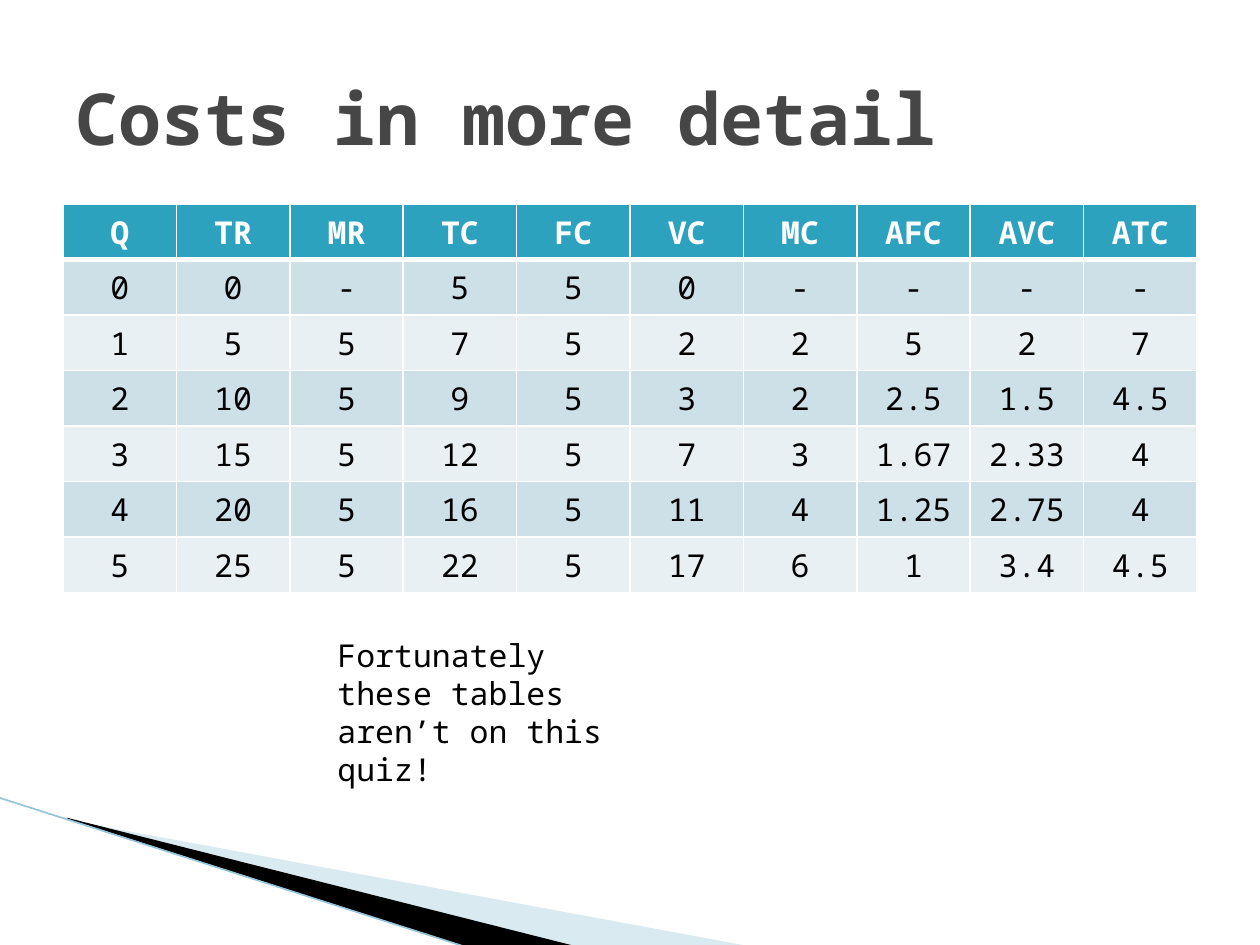
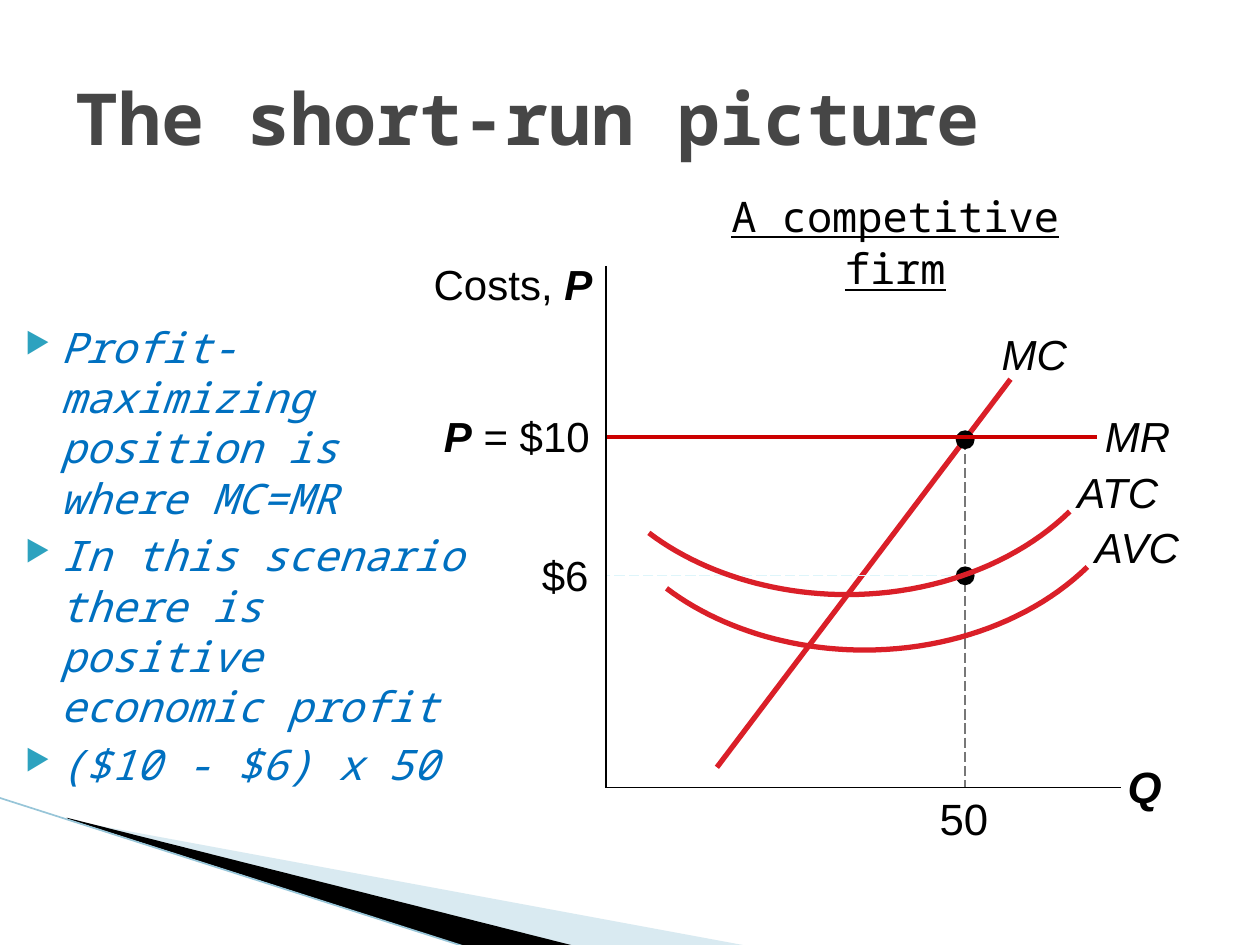
from dataclasses import dataclass

from lxml import etree
from pptx import Presentation
from pptx import util as u
from pptx.dml.color import RGBColor
from pptx.enum import dml, shapes, text
from pptx.oxml import ns

COLUMNS, ROWS = 100, 75
CELL = u.Inches(10) // COLUMNS
MONO, SANS = "Noto Sans Mono", "Arial"
COLORS = {
    "white": "FFFFFF", "black": "000000", "title": "464646", "accent": "2DA2BF",
    "band_dark": "CDE0E8", "band_light": "E8F0F4", "body": "0070C0",
    "wedge": "A0CBDC", "edge": "97C5D8", "curve": "DA1F28", "price": "CC0000",
    "guide": "777777", "cost_guide": "DEF5FA",
}
CENTER, RIGHT = text.PP_ALIGN.CENTER, text.PP_ALIGN.RIGHT

COST_ROWS = [
    "Q TR MR TC FC VC MC AFC AVC ATC",
    "0 0 - 5 5 0 - - - -",
    "1 5 5 7 5 2 2 5 2 7",
    "2 10 5 9 5 3 2 2.5 1.5 4.5",
    "3 15 5 12 5 7 3 1.67 2.33 4",
    "4 20 5 16 5 11 4 1.25 2.75 4",
    "5 25 5 22 5 17 6 1 3.4 4.5",
]
PROFIT_POINTS = [
    "Profit-maximizing position is where MC=MR",
    "In this scenario there is positive economic profit",
    "($10 - $6) x 50",
]


@dataclass
class Box:
    """A region measured in grid columns and rows."""
    left: float
    top: float
    width: float
    height: float

    def inner(self, left, top, width, height):
        return Box(self.left + left, self.top + top, width, height)

    def point(self, column, row):
        return round((self.left + column) * CELL), round((self.top + row) * CELL)

    def emu(self):
        return (*self.point(0, 0), round(self.width * CELL), round(self.height * CELL))


PAGE = Box(0, 0, COLUMNS, ROWS)
TITLE = Box(5, 3, 90, 12.5)
PLOT = Box(48.1, 21.1, 40.9, 41.4)


def rgb(name):
    return RGBColor.from_string(COLORS[name])


def add_element(parent, tag, **attributes):
    return etree.SubElement(parent, ns.qn(tag), attributes)


def add_run(paragraph, words, size, font=MONO, color="black", **style):
    run = paragraph.add_run()
    run.text = words
    run.font.name, run.font.size = font, u.Pt(size)
    run.font.color.rgb = rgb(color)
    for name, value in style.items():
        setattr(run.font, name, value)


def add_text_box(slide, box, padded=True, align=None):
    """Add a wrapping text box and return its frame."""
    frame = slide.shapes.add_textbox(*box.emu()).text_frame
    frame.word_wrap = True
    if not padded:
        frame.margin_left = frame.margin_right = frame.margin_top = frame.margin_bottom = 0
    frame.paragraphs[0].alignment = align
    return frame


def add_line(slide, box, start, end, color, width, dashed=False):
    connector = slide.shapes.add_connector(
        shapes.MSO_CONNECTOR.STRAIGHT, *box.point(*start), *box.point(*end))
    connector.line.color.rgb = rgb(color)
    connector.line.width = u.Pt(width)
    if dashed:
        connector.line.dash_style = dml.MSO_LINE.LONG_DASH
    add_element(connector._element.spPr, "a:effectLst")


def add_outline(slide, box, points, closed):
    start, *rest = [box.point(*point) for point in points]
    builder = slide.shapes.build_freeform(*start)
    builder.add_line_segments(rest, close=closed)
    shape = builder.convert_to_shape()
    shape.shadow.inherit = False
    return shape


def add_wedge(slide, box, points, color, opacity=None):
    shape = add_outline(slide, box, points, closed=True)
    shape.fill.solid()
    shape.fill.fore_color.rgb = rgb(color)
    shape.line.fill.background()
    if opacity:
        fill = shape._element.spPr.find(ns.qn("a:solidFill"))
        add_element(fill[0], "a:alpha", val=str(opacity * 1000))


def add_corner_wedges(slide, box):
    add_wedge(slide, box, [(5.5, 65.1), (59.5, 75.1), (45.6, 75.1), (5.5, 65)], "wedge", 40)
    add_wedge(slide, box, [(5.3, 64.9), (45.7, 75.1), (37.2, 75.2), (5.4, 65)], "black")
    add_line(slide, box, (-0.1, 63.3), (37.1, 75.2), "edge", 0.95)


def add_title(slide, box, words):
    frame = add_text_box(slide, box)
    frame.vertical_anchor = text.MSO_ANCHOR.MIDDLE
    add_run(frame.paragraphs[0], words, 41, color="title", bold=True)


def add_cell_borders(cell, bottom):
    properties = cell._tc.get_or_add_tcPr()
    for side, width in (("L", 1), ("R", 1), ("T", 1), ("B", bottom)):
        line = add_element(properties, f"a:ln{side}", w=str(u.Pt(width)))
        add_element(add_element(line, "a:solidFill"), "a:srgbClr", val=COLORS["white"])


def add_cost_table(slide, box):
    rows = [line.split() for line in COST_ROWS]
    table = slide.shapes.add_table(len(rows), len(rows[0]), *box.emu()).table
    for i, values in enumerate(rows):
        header = i == 0
        fill = "accent" if header else "band_dark" if i % 2 else "band_light"
        for j, value in enumerate(values):
            cell = table.cell(i, j)
            add_cell_borders(cell, bottom=3 if header else 1)
            cell.fill.solid()
            cell.fill.fore_color.rgb = rgb(fill)
            paragraph = cell.text_frame.paragraphs[0]
            paragraph.alignment = CENTER
            add_run(paragraph, value, 18, color="white" if header else "black", bold=header)


def add_bullets(slide, box, points):
    frame = add_text_box(slide, box)
    for i, point in enumerate(points):
        paragraph = frame.add_paragraph() if i else frame.paragraphs[0]
        properties = paragraph._p.get_or_add_pPr()
        properties.set("marL", str(u.Inches(0.4)))
        properties.set("indent", str(u.Inches(-0.28)))
        add_element(add_element(properties, "a:buClr"), "a:srgbClr", val=COLORS["accent"])
        add_element(properties, "a:buSzPct", val="68000")
        add_element(properties, "a:buChar", char="▶")
        if i:
            paragraph.space_before = u.Pt(4)
        add_run(paragraph, point, 24, color="body", italic=True)


def add_label(slide, box, *runs, size=24, padded=False, align=None):
    """Add a diagram label; each run is its words and whether bold and italic."""
    paragraph = add_text_box(slide, box, padded, align).paragraphs[0]
    for words, bold, italic in runs:
        add_run(paragraph, words, size, SANS, bold=bold, italic=italic)


def bezier(start, first, second, end, steps=24):
    """Return points along a cubic curve, leaving out its start."""
    for step in range(1, steps + 1):
        t = step / steps
        weights = (1 - t) ** 3, 3 * t * (1 - t) ** 2, 3 * t * t * (1 - t), t ** 3
        yield tuple(sum(w * p[axis] for w, p in zip(weights, (start, first, second, end)))
                    for axis in (0, 1))


def add_average_cost(slide, box, name):
    right, bottom, left = (36.8, 19.5), (19.1, 26.1), (3.4, 21.2)
    points = [right, *bezier(right, (32.6, 23.6), (26.1, 26.1), bottom),
              *bezier(bottom, (13.2, 26.1), (7.5, 24.3), left)]
    curve = add_outline(slide, box, points, closed=False)
    curve.fill.background()
    curve.line.color.rgb = rgb("curve")
    curve.line.width = u.Pt(3)
    add_label(slide, box.inner(37.4, 15.9, 8.1, 4), (name, False, True))


def add_dot(slide, box, column, row, diameter=1.5):
    area = box.inner(column - diameter / 2, row - diameter / 2, diameter, diameter)
    dot = slide.shapes.add_shape(shapes.MSO_SHAPE.OVAL, *area.emu())
    dot.shadow.inherit = False
    dot.fill.solid()
    dot.fill.fore_color.rgb = rgb("black")
    dot.line.fill.background()


def add_firm_diagram(slide, box):
    output, price, cost = 28.5, 13.6, 24.6

    add_line(slide, box, (8.8, 39.8), (32.1, 9), "curve", 3)
    add_label(slide, box.inner(31.4, 5, 6.6, 4), ("MC", False, True))

    add_label(slide, box.inner(output - 2.4, 41.7, 4.6, 4.2), ("50", False, False),
              size=25, align=CENTER)
    add_line(slide, box, (output, price + 0.2), (output, box.height), "guide", 0.75, dashed=True)
    add_dot(slide, box, output, price + 0.2)

    add_line(slide, box, (output, cost), (0, cost), "cost_guide", 0.75, dashed=True)
    add_dot(slide, box, output, cost)
    add_label(slide, box.inner(-6.6, cost - 2.1, 5.2, 4), ("$6", False, False), align=RIGHT)

    heading = add_text_box(slide, box.inner(5.8, -6.7, 34.3, 5.3), align=CENTER).paragraphs[0]
    heading.line_spacing = 1.05
    add_run(heading, "A competitive firm", 24, underline=True)

    add_line(slide, box, (0, price), (39, price), "price", 2.25)
    add_label(slide, box.inner(-15, price - 2.6, 14.7, 5), ("P", True, True),
              (" = $10", False, False), padded=True, align=RIGHT)
    add_label(slide, box.inner(39.6, price - 2.1, 6.6, 4), ("MR", False, True))

    add_line(slide, box, (0, 0), (0, box.height), "black", 0.75)
    add_line(slide, box, (0, box.height), (box.width, box.height), "black", 0.75)
    add_label(slide, box.inner(40.4, 38.7, 5.9, 5.2), ("Q", True, True), size=25, padded=True)
    add_label(slide, box.inner(-18.4, -1.1, 18.3, 5), ("Costs, ", False, False),
              ("P", True, True), padded=True, align=RIGHT)

    add_average_cost(slide, box, "ATC")
    add_average_cost(slide, box.inner(1.4, 4.4, box.width, box.height), "AVC")


def add_page(presentation):
    """Add a blank slide with the shared corner decoration."""
    slide = presentation.slides.add_slide(presentation.slide_layouts[6])
    add_corner_wedges(slide, PAGE)
    return slide


def add_cost_slide(presentation):
    slide = add_page(presentation)
    add_cost_table(slide, PAGE.inner(5, 16.2, 90, 28.4))
    add_title(slide, TITLE, "Costs in more detail")
    note = add_text_box(slide, PAGE.inner(25.8, 50, 26.7, 10.1))
    add_run(note.paragraphs[0], "Fortunately these tables aren’t on this quiz!", 18)


def add_short_run_slide(presentation):
    slide = add_page(presentation)
    add_bullets(slide, PAGE.inner(-0.2, 25, 39.1, 39.3), PROFIT_POINTS)
    add_title(slide, TITLE, "The short-run picture")
    add_firm_diagram(slide, PLOT)


def main():
    presentation = Presentation()
    presentation.slide_width = COLUMNS * CELL
    presentation.slide_height = ROWS * CELL
    add_cost_slide(presentation)
    add_short_run_slide(presentation)
    presentation.save("out.pptx")


if __name__ == "__main__":
    main()
